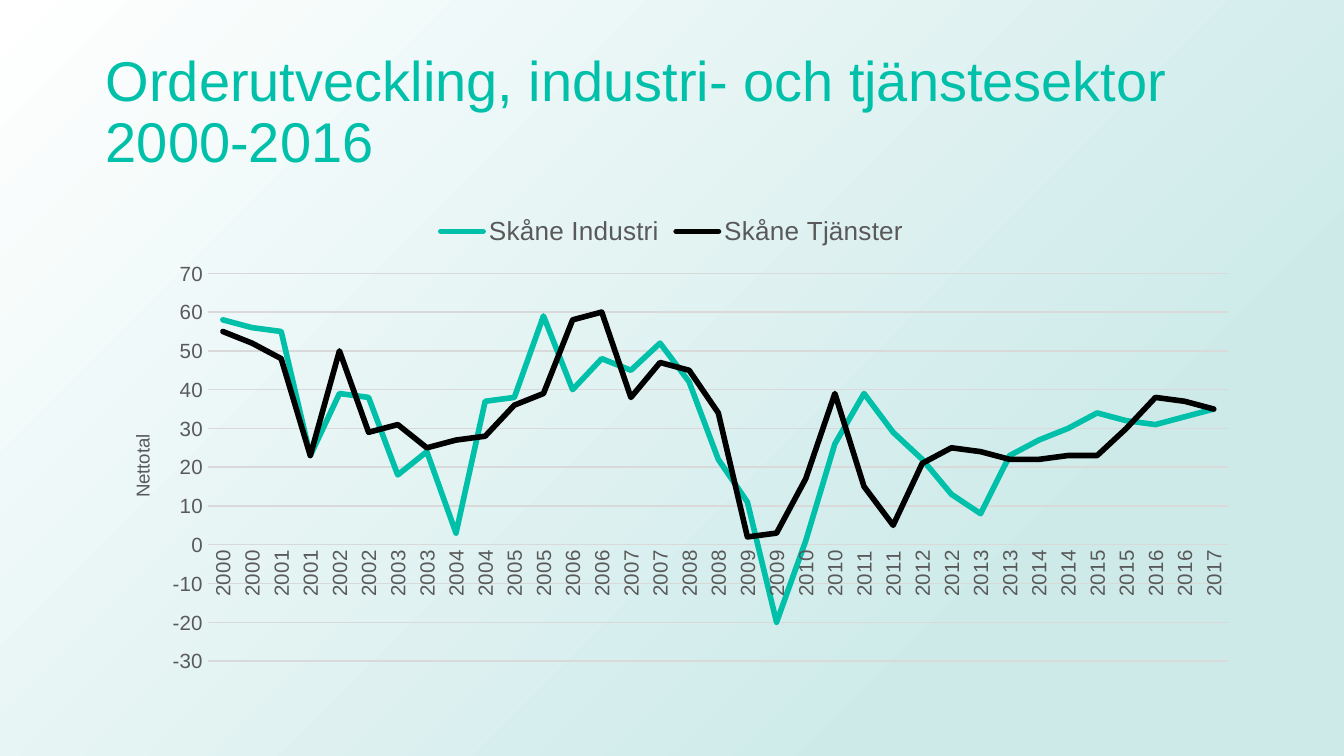
from lxml import etree
from pptx import Presentation, util as u
from pptx.chart.data import CategoryChartData
from pptx.dml.color import RGBColor
from pptx.enum import chart as ch, shapes, text
from pptx.oxml.ns import qn

PX = 9525  # 96 px to the inch
WIDTH, HEIGHT = 960, 540
THEME = {
    "teal": "00C0A9", "black": "000000", "grey": "595959", "grid": "D9D9D9",
    "mist": "CDEAE9", "white": "FFFFFF", "font": "Arial", "chart_font": "Calibri",
    "title": 30, "legend": 14, "labels": 11, "axis_title": 10,
}
UPWARD = "-5400000"

INDUSTRY = [58, 56, 55, 23, 39, 38, 18, 24, 3, 37, 38, 59, 40, 48, 45, 52, 42, 22,
            11, -20, 1, 26, 39, 29, 22, 13, 8, 23, 27, 30, 34, 32, 31, 33, 35]
SERVICES = [55, 52, 48, 23, 50, 29, 31, 25, 27, 28, 36, 39, 58, 60, 38, 47, 45, 34,
            2, 3, 17, 39, 15, 5, 21, 25, 24, 22, 22, 23, 23, 30, 38, 37, 35]


def style_font(font, size, color="grey", name="font"):
    font.size, font.name, font.bold = u.Pt(THEME[size]), THEME[name], False
    font.color.rgb = RGBColor.from_string(THEME[color])


def write_text(frame, words, spacing=None, align=None, **style):
    para = frame.paragraphs[0]
    para.line_spacing, para.alignment = spacing, align
    span = para.add_run()
    span.text = words
    style_font(span.font, **style)


deck = Presentation()
deck.slide_width, deck.slide_height = WIDTH * PX, HEIGHT * PX
page = deck.slides.add_slide(deck.slide_layouts[5])

# Background: radial fade from the lower right corner
backdrop = page.shapes.add_shape(shapes.MSO_SHAPE.RECTANGLE, 0, 0, WIDTH * PX, HEIGHT * PX)
backdrop.shadow.inherit = False
backdrop.line.fill.background()
backdrop.fill.gradient()
for stop, position, color in zip(backdrop.fill.gradient_stops, (0.23, 1), ("mist", "white")):
    stop.position = position
    stop.color.rgb = RGBColor.from_string(THEME[color])
gradient = backdrop.element.spPr.find(qn("a:gradFill"))
gradient.remove(gradient.find(qn("a:lin")))
circle = etree.SubElement(gradient, qn("a:path"), path="circle")
etree.SubElement(circle, qn("a:fillToRect"), l="100000", t="100000")
page.shapes.element.insert(2, backdrop.element)

# Title
title = page.shapes.title
title.left, title.top, title.width, title.height = (n * PX for n in (66, 29, 828, 105))
title.text_frame.word_wrap = True
title.text_frame.vertical_anchor = text.MSO_ANCHOR.MIDDLE
write_text(title.text_frame, "Orderutveckling, industri- och tjänstesektor 2000-2016",
           spacing=0.9, align=text.PP_ALIGN.LEFT, size="title", color="teal")

# Chart: two points a year, with one for the last year
data = CategoryChartData(number_format="0")
data.categories = [str(2000 + half // 2) for half in range(len(INDUSTRY))]
data.add_series("Skåne Industri", INDUSTRY)
data.add_series("Skåne Tjänster", SERVICES)
chart = page.shapes.add_chart(ch.XL_CHART_TYPE.LINE, 66 * PX, 144 * PX,
                              828 * PX, 342 * PX, data).chart
style_font(chart.font, "axis_title", "black", "chart_font")
chart.has_title = False
chart.has_legend = True
chart.legend.position = ch.XL_LEGEND_POSITION.TOP
chart.legend.include_in_layout = False
style_font(chart.legend.font, "legend")

plot = chart.plots[0]
plot.vary_by_categories = False
for series, color in zip(plot.series, ("teal", "black")):
    series.smooth = False
    series.format.line.width = u.Pt(3)
    series.format.line.color.rgb = RGBColor.from_string(THEME[color])
for line in chart.element.xpath(".//c:ser/c:spPr/a:ln"):
    line.set("cap", "rnd")
    etree.SubElement(line, qn("a:round"))

years, values = chart.category_axis, chart.value_axis
for axis in (years, values):
    axis.major_tick_mark = axis.minor_tick_mark = ch.XL_TICK_MARK.NONE
    style_font(axis.tick_labels.font, "labels")
values.minimum_scale, values.maximum_scale, values.major_unit = -30, 70, 10
values.tick_labels.number_format = "0"
values.tick_labels.number_format_is_linked = False
values.format.line.fill.background()
values.has_major_gridlines = True
for line in (years.format.line, values.major_gridlines.format.line):
    line.width = u.Pt(0.75)
    line.color.rgb = RGBColor.from_string(THEME["grid"])
write_text(values.axis_title.text_frame, "Nettotal", size="axis_title")
for body in chart.element.xpath(".//c:catAx/c:txPr/a:bodyPr | .//c:valAx/c:title//a:bodyPr"):
    body.set("rot", UPWARD)
    body.set("vert", "horz")

# Fixed places for the plot and the axis title, as shares of the chart
edges = {"xMode": "edge", "yMode": "edge"}
plot_place = {"layoutTarget": "inner", **edges, "x": 0.1, "y": 0.15, "w": 0.88, "h": 0.81}
title_place = {**edges, "x": 0.03, "y": 0.48}
for parent, index, place in ((chart.element.xpath(".//c:plotArea")[0], 0, plot_place),
                             (values.axis_title.element, 1, title_place)):
    for old in parent.findall(qn("c:layout")):
        parent.remove(old)
    layout = etree.Element(qn("c:layout"))
    manual = etree.SubElement(layout, qn("c:manualLayout"))
    for tag, value in place.items():
        etree.SubElement(manual, qn(f"c:{tag}"), val=str(value))
    parent.insert(index, layout)

deck.save("out.pptx")
